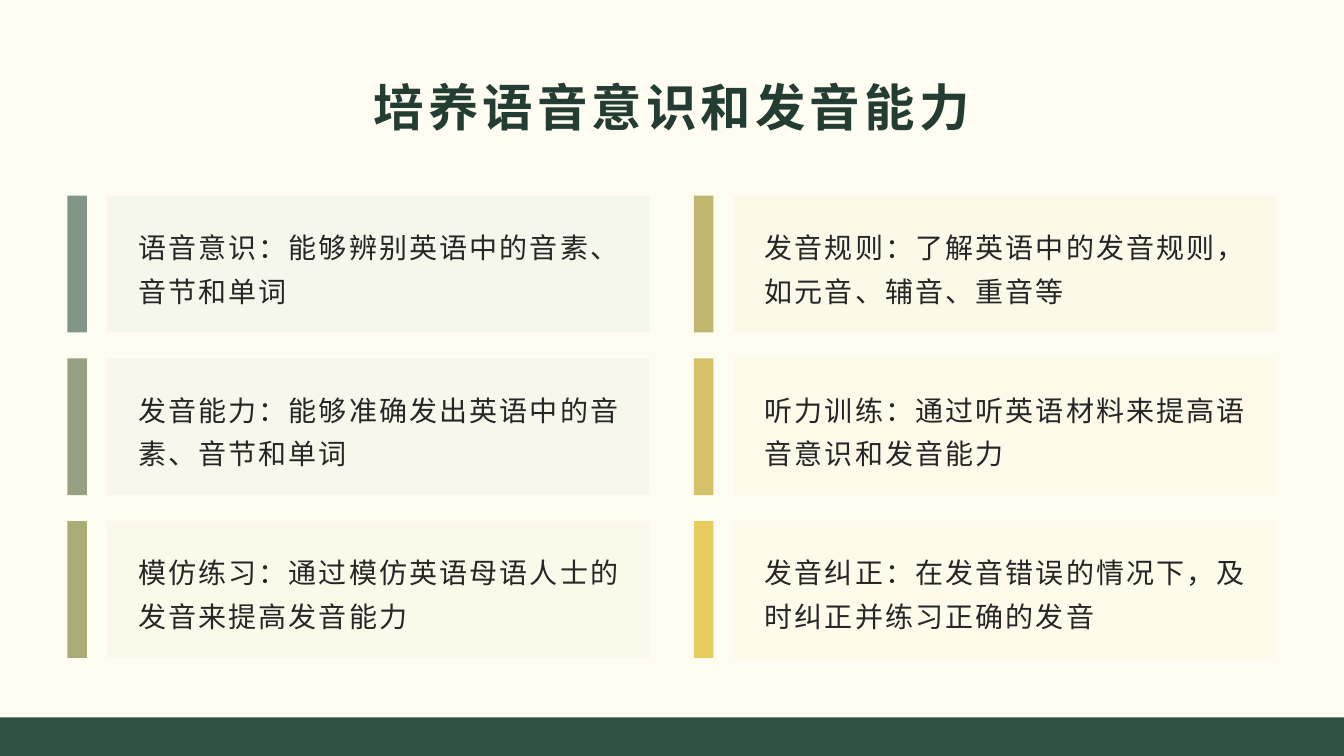
from lxml import etree
from pptx import Presentation
from pptx.dml.color import RGBColor
from pptx.enum import shapes, text
from pptx.oxml import ns
from pptx.util import Cm, Pt

# Content: each column holds (text, card colour, bar colour)
TITLE = "培养语音意识和发音能力"
COLS = [
    [
        ("语音意识：能够辨别英语中的音素、音节和单词", "CFE3DA", "305242"),
        ("发音能力：能够准确发出英语中的音素、音节和单词", "DEE6D0", "526435"),
        ("模仿练习：通过模仿英语母语人士的发音来提高发音能力", "ECEDCA", "747628"),
    ],
    [
        ("发音规则：了解英语中的发音规则，如元音、辅音、重音等", "F5F0C6", "97881A"),
        ("听力训练：通过听英语材料来提高语音意识和发音能力", "FBF1C5", "B99A0D"),
        ("发音纠正：在发音错误的情况下，及时纠正并练习正确的发音", "FFF3C5", "DBAC00"),
    ],
]
FONT = "Noto Sans CJK SC"

# Layout in centimetres
WIDE, HIGH = 33.87, 19.05
LEFT, TOP = 1.7, 4.93
STEP_X, STEP_Y = 15.79, 4.1
BAR_W, CARD_W, CARD_H = 0.49, 13.67, 3.45
CARD_DX = 1.0
PAD_X, PAD_Y = 0.53, 0.3
FOOT_H = 0.97


def paint(fill, color, alpha=100):
    fill.solid()
    fill.fore_color.rgb = RGBColor.from_string(color)


def add_rect(x, y, w, h, color, alpha=100):
    rect = slide.shapes.add_shape(
        shapes.MSO_SHAPE.RECTANGLE, Cm(x), Cm(y), Cm(w), Cm(h))
    rect.shadow.inherit = False
    rect.line.fill.background()
    paint(rect.fill, color)
    if alpha < 100:
        tint = rect.element.spPr.find(ns.qn("a:solidFill"))[0]
        etree.SubElement(tint, ns.qn("a:alpha"), val=str(alpha * 1000))


def add_text(words, x, y, w, h, size=20, color="262626", bold=False,
             gap=1.5, lead=1.3, align=text.PP_ALIGN.LEFT):
    frame = slide.shapes.add_textbox(Cm(x), Cm(y), Cm(w), Cm(h)).text_frame
    frame.word_wrap = True
    frame.vertical_anchor = text.MSO_ANCHOR.MIDDLE
    para = frame.paragraphs[0]
    para.alignment = align
    para.line_spacing = lead
    run = para.add_run()
    run.text = words
    font = run.font
    font.size, font.bold, font.name = Pt(size), bold, FONT
    font.color.rgb = RGBColor.from_string(color)
    # Letter spacing and East Asian font
    props = run.element if hasattr(run, "element") else run._r
    props = props.get_or_add_rPr()
    props.set("lang", "zh-CN")
    props.set("spc", str(int(gap * 100)))
    etree.SubElement(props, ns.qn("a:ea"), typeface=FONT)


prs = Presentation()
prs.slide_width, prs.slide_height = Cm(WIDE), Cm(HIGH)
slide = prs.slides.add_slide(prs.slide_layouts[6])
paint(slide.background.fill, "FFFCF2")

# Footer band and title
add_rect(0, HIGH - FOOT_H, WIDE, FOOT_H, "305242")
add_text(TITLE, LEFT, 1.7, WIDE - 2 * LEFT, 1.96, size=36, color="243D32",
         bold=True, gap=3, lead=1.0, align=text.PP_ALIGN.CENTER)

# Cards with a bar on the left
for col, items in enumerate(COLS):
    for row, (words, card, bar) in enumerate(items):
        x, y = LEFT + col * STEP_X, TOP + row * STEP_Y
        add_rect(x + CARD_DX, y, CARD_W, CARD_H, card, alpha=20)
        add_rect(x, y, BAR_W, CARD_H, bar, alpha=60)
        add_text(words, x + CARD_DX + PAD_X, y + PAD_Y,
                 CARD_W - 1.6 * PAD_X, CARD_H - 2 * PAD_Y)

prs.save("out.pptx")
